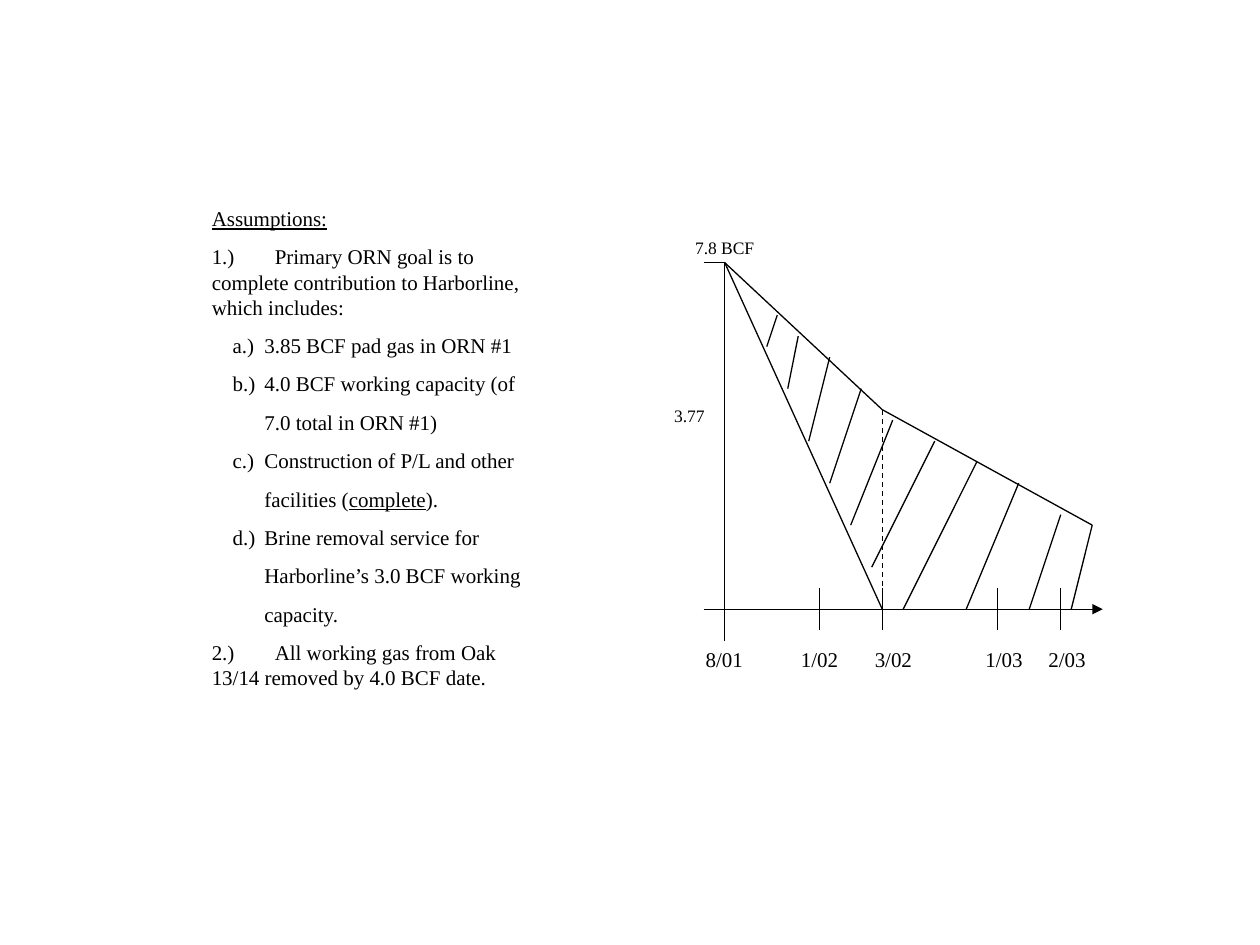
import pptx
import pptx.util
import pptx.dml.color
import pptx.enum.dml
import pptx.enum.shapes
import pptx.oxml.ns
from lxml import etree

Cm, Pt = pptx.util.Cm, pptx.util.Pt
qn = pptx.oxml.ns.qn
BLACK = pptx.dml.color.RGBColor(0, 0, 0)
FONT = "Times New Roman"
GRID = 2.54 / 12  # the diagram sits on a grid of twelfths of an inch, in cm


def add_tabs(p, stops):
    tabs = etree.SubElement(p._p.get_or_add_pPr(), qn("a:tabLst"))
    for stop in stops:
        etree.SubElement(tabs, qn("a:tab"), pos=str(int(Cm(stop))), algn="l")


def style(p, size):
    p.font.name, p.font.size, p.font.color.rgb = FONT, Pt(size), BLACK


def add_box(slide, left, top, width, height):
    tf = slide.shapes.add_textbox(Cm(left), Cm(top), Cm(width), Cm(height)).text_frame
    tf.word_wrap = True
    return tf


def add_label(slide, left, top, width, text, size, stops=()):
    p = add_box(slide, left, top, width, 0.7).paragraphs[0]
    p.text = text
    if stops:
        add_tabs(p, stops)
    style(p, size)


def add_assumptions(slide, left, top, width, height):
    # Each line: left margin, first-line indent, tab stops, (text, underlined) runs
    numbered = (0, 0, [0.67])
    lettered = (1.06, -0.64, [])
    continued = (1.06, 0, [])
    lines = [
        ((0, 0, []), [("Assumptions:", True)]),
        (numbered, [("1.)\tPrimary ORN goal is to complete contribution to "
                     "Harborline, which includes:", False)]),
        (lettered, [("a.)\t3.85 BCF pad gas in ORN #1", False)]),
        (lettered, [("b.)\t4.0 BCF working capacity (of", False)]),
        (continued, [("7.0 total in ORN #1)", False)]),
        (lettered, [("c.)\tConstruction of P/L and other", False)]),
        (continued, [("facilities (", False), ("complete", True), (").", False)]),
        (lettered, [("d.)\tBrine removal service for", False)]),
        (continued, [("Harborline’s 3.0 BCF working", False)]),
        (continued, [("capacity.", False)]),
        (numbered, [("2.)\tAll working gas from Oak 13/14 removed by 4.0 BCF date.", False)]),
    ]
    tf = add_box(slide, left, top, width, height)
    for i, ((margin, indent, stops), runs) in enumerate(lines):
        p = tf.add_paragraph() if i else tf.paragraphs[0]
        if i:
            p.space_before = Pt(7.5)
        pPr = p._p.get_or_add_pPr()
        pPr.set("marL", str(int(Cm(margin))))
        pPr.set("indent", str(int(Cm(indent))))
        if stops:
            add_tabs(p, stops)
        for text, underlined in runs:
            r = p.add_run()
            r.text = text
            if underlined:
                r.font.underline = True
        style(p, 12)


def add_diagram(slide, left, top):
    def line(x1, y1, x2, y2):
        c = slide.shapes.add_connector(
            pptx.enum.shapes.MSO_CONNECTOR.STRAIGHT,
            Cm(left + x1 * GRID), Cm(top + y1 * GRID),
            Cm(left + x2 * GRID), Cm(top + y2 * GRID))
        c.line.color.rgb, c.line.width = BLACK, Pt(0.75)
        etree.SubElement(c._element.spPr, qn("a:effectLst"))
        return c

    start, bend, end = (6, 3), (21, 17), (41, 28)
    base = 36

    # Axes, top mark and date ticks
    line(*start, 6, 39)
    line(4, 3, *start)
    axis = line(4, base, 42, base)
    etree.SubElement(axis.line._get_or_add_ln(), qn("a:tailEnd"), type="triangle")
    for x in (15, 21, 32, 38):
        line(x, base - 2, x, base + 2)

    # Volume curves
    line(*start, 21, base)
    line(*start, *bend)
    line(*bend, *end)
    dashed = line(*bend, 21, base - 1)
    dashed.line.dash_style = pptx.enum.dml.MSO_LINE.DASH

    # Hatching between the curves
    for ends in [(11, 8, 10, 11), (13, 10, 12, 15), (16, 12, 14, 20),
                 (19, 15, 16, 24), (22, 18, 18, 28), (26, 20, 20, 32),
                 (30, 22, 23, base), (34, 24, 29, base), (38, 27, 35, base),
                 (*end, 39, base)]:
        line(*ends)

    # Labels
    add_label(slide, left + 2 * GRID, top, 1.91, "7.8 BCF", 10)
    add_label(slide, left, top + 16 * GRID, 1.48, "3.77", 10)
    add_label(slide, left + 3 * GRID, top + 39 * GRID, 8.26,
              "8/01\t1/02\t3/02\t1/03\t2/03", 12, [1.92, 3.41, 5.64, 6.91])


def main():
    prs = pptx.Presentation()
    prs.slide_width, prs.slide_height = Cm(25.4), Cm(19.05)
    slide = prs.slides.add_slide(prs.slide_layouts[6])
    add_assumptions(slide, 4.02, 4.02, 6.99, 10.54)
    add_diagram(slide, 13.34, 4.66)
    prs.save("out.pptx")


if __name__ == "__main__":
    main()
